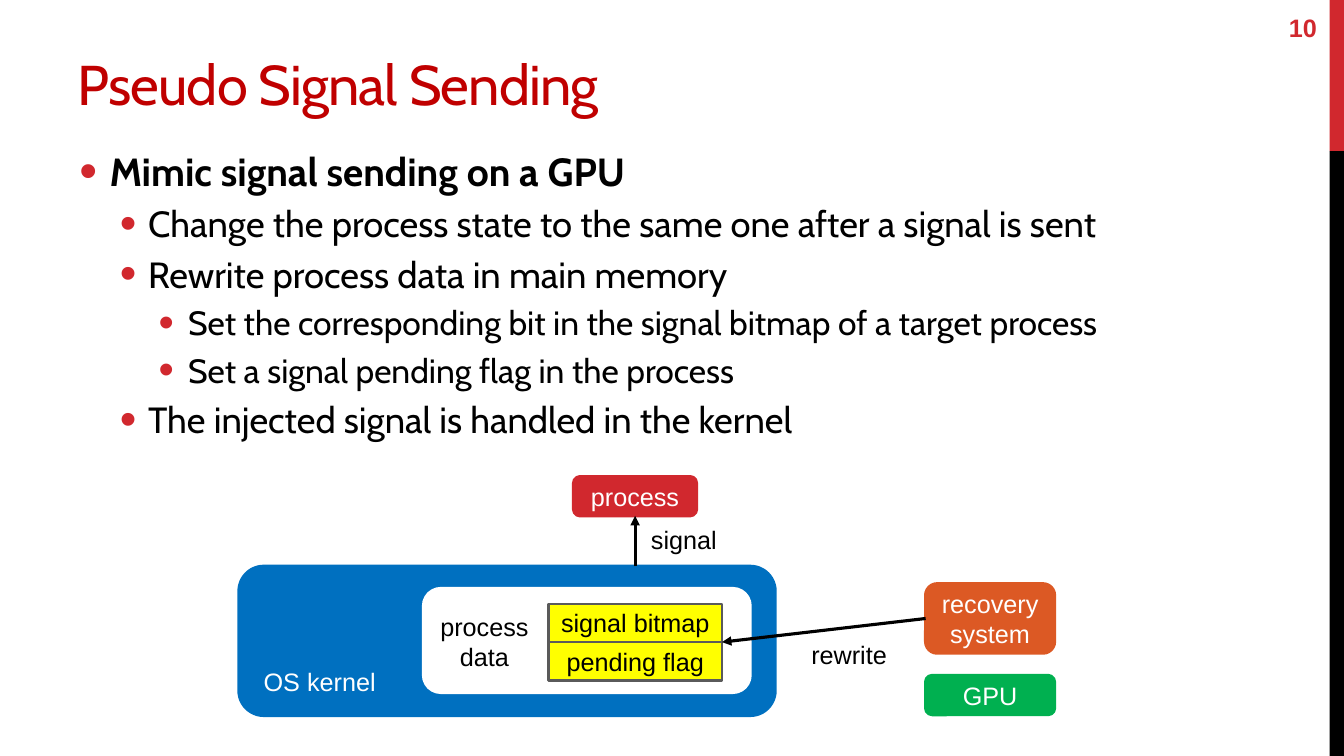
from lxml import etree
from pptx import Presentation
from pptx.dml.color import RGBColor
from pptx.enum.shapes import MSO_CONNECTOR, MSO_SHAPE
from pptx.enum.text import MSO_ANCHOR, MSO_AUTO_SIZE, PP_ALIGN
from pptx.oxml.ns import qn
from pptx.util import Cm, Pt

RECT, ROUND = MSO_SHAPE.RECTANGLE, MSO_SHAPE.ROUNDED_RECTANGLE
STRAIGHT = MSO_CONNECTOR.STRAIGHT
LEFT, CENTER, RIGHT = PP_ALIGN.LEFT, PP_ALIGN.CENTER, PP_ALIGN.RIGHT
MIDDLE, BOTTOM = MSO_ANCHOR.MIDDLE, MSO_ANCHOR.BOTTOM
NO_FIT = MSO_AUTO_SIZE.NONE
LEFT_SIDE, BOTTOM_SIDE = 1, 2

BLACK = RGBColor(0x00, 0x00, 0x00)
WHITE = RGBColor(0xFF, 0xFF, 0xFF)
RED = RGBColor(0xD1, 0x28, 0x2E)
DARK_RED = RGBColor(0xC0, 0x00, 0x00)
BLUE = RGBColor(0x00, 0x70, 0xC0)
GREEN = RGBColor(0x00, 0xB0, 0x50)
ORANGE = RGBColor(0xDC, 0x59, 0x24)
YELLOW = RGBColor(0xFF, 0xFF, 0x00)
GRAY = RGBColor(0x5A, 0x5A, 0x5A)

# Level: (left indent in cm, hanging indent in cm, text size, space before)
LEVELS = [(0.76, 0.76, 28, 6), (1.73, 0.71, 26, 5), (2.74, 0.74, 24, 5)]
BULLETS = [
    (0, "Mimic signal sending on a GPU"),
    (1, "Change the process state to the same one after a signal is sent"),
    (1, "Rewrite process data in main memory"),
    (2, "Set the corresponding bit in the signal bitmap of a target process"),
    (2, "Set a signal pending flag in the process"),
    (1, "The injected signal is handled in the kernel"),
]


def apply(target, values):
    for name, value in values.items():
        setattr(target, name, value)


def add_xml(parent, tag, **attributes):
    return etree.SubElement(parent, qn(tag), attributes)


class SlideBuilder:
    heading_font = "Cabin"
    label_font = "Arial"
    label_size = 18

    def __init__(self, deck):
        self.page = deck.slides.add_slide(deck.slide_layouts[5])

    def add_span(self, para, text, font, size, color, bold=False):
        span = para.add_run()
        span.text = text
        apply(span.font, {"name": font, "size": Pt(size), "bold": bold})
        span.font.color.rgb = color
        return span

    def fill_label(self, box, text, color, align, bold=False):
        frame = box.text_frame
        for index, line in enumerate(text.split("\n")):
            para = frame.add_paragraph() if index else frame.paragraphs[0]
            para.alignment = align
            self.add_span(para, line, self.label_font, self.label_size, color, bold)

    def title(self, text, left, top, width, height):
        box = self.page.shapes.title
        apply(box, {"left": Cm(left), "top": Cm(top),
                    "width": Cm(width), "height": Cm(height)})
        apply(box.text_frame, {"vertical_anchor": BOTTOM, "auto_size": NO_FIT,
                               "word_wrap": True})
        para = box.text_frame.paragraphs[0]
        para.alignment = LEFT
        span = self.add_span(para, text, self.heading_font, 40, DARK_RED)
        span.font._element.set("spc", "-60")

    def bullets(self, items, left, top, width, height):
        frame = self.page.shapes.add_textbox(
            Cm(left), Cm(top), Cm(width), Cm(height)).text_frame
        apply(frame, {"word_wrap": True, "margin_left": Cm(0.3),
                      "margin_right": Cm(0.3)})
        for index, (level, text) in enumerate(items):
            indent, hanging, size, before = LEVELS[level]
            para = frame.add_paragraph() if index else frame.paragraphs[0]
            apply(para, {"level": level, "space_before": Pt(before)})
            self.add_span(para, text, self.heading_font, size, BLACK, level == 0)
            properties = para._p.get_or_add_pPr()
            properties.set("marL", str(Cm(indent)))
            properties.set("indent", str(-Cm(hanging)))
            add_xml(add_xml(properties, "a:buClr"), "a:srgbClr", val=str(RED))
            add_xml(properties, "a:buSzPct", val="130000")
            add_xml(properties, "a:buFont", typeface="Arial")
            add_xml(properties, "a:buChar", char="•")

    def block(self, kind, left, top, width, height, fill,
              text="", color=WHITE, line=None, line_width=2.25):
        box = self.page.shapes.add_shape(
            kind, Cm(left), Cm(top), Cm(width), Cm(height))
        box.shadow.inherit = False
        box.fill.solid()
        box.fill.fore_color.rgb = fill
        box.line.color.rgb = line or fill
        box.line.width = Pt(line_width)
        if text:
            box.text_frame.vertical_anchor = MIDDLE
            self.fill_label(box, text, color, CENTER)
        return box

    def bar(self, top, height, fill):
        self.block(RECT, 33.5, top, 0.36, height, fill).line.fill.background()

    def label(self, text, left, top, width, height=1.02, color=BLACK,
              align=LEFT, bold=False):
        box = self.page.shapes.add_textbox(
            Cm(left), Cm(top), Cm(width), Cm(height))
        box.text_frame.word_wrap = False
        self.fill_label(box, text, color, align, bold)

    def arrow(self, start, end, start_box=None, end_box=None):
        """Draw an arrow; each box is a (shape, side) pair to join."""
        line = self.page.shapes.add_connector(
            STRAIGHT, *(Cm(value) for value in start + end))
        if start_box:
            line.begin_connect(*start_box)
        if end_box:
            line.end_connect(*end_box)
        line.line.color.rgb = BLACK
        line.line.width = Pt(2.25)
        add_xml(line.line._get_or_add_ln(), "a:tailEnd", type="triangle")
        add_xml(line._element.spPr, "a:effectLst")


def main():
    deck = Presentation()
    deck.slide_width, deck.slide_height = Cm(33.86), Cm(19.05)
    slide = SlideBuilder(deck)

    slide.bar(0, 3.81, RED)
    slide.bar(3.81, 15.24, BLACK)
    slide.title("Pseudo Signal Sending", 1.7, 0.43, 30.53, 2.64)
    slide.bullets(BULLETS, 1.7, 3.58, 30.53, 14.45)
    slide.label("10", 30.89, 0.18, 2.54, color=RED, align=RIGHT, bold=True)

    slide.block(ROUND, 6.02, 14.27, 13.51, 3.76, BLUE)
    slide.block(ROUND, 10.67, 14.83, 8.23, 2.62, WHITE)
    for row, text in enumerate(["signal bitmap", "pending flag"]):
        slide.block(RECT, 13.82, 15.21 + row * 0.97, 4.37, 0.97, YELLOW,
                    text, BLACK, GRAY, 1.5)
    process = slide.block(ROUND, 14.45, 12.01, 3.1, 0.99, RED, "process")
    slide.block(ROUND, 23.32, 17.02, 3.25, 0.99, GREEN, "GPU")
    recovery = slide.block(ROUND, 23.32, 14.71, 3.25, 1.75, ORANGE,
                           "recovery system")

    slide.arrow((23.32, 15.58), (18.19, 16.18), start_box=(recovery, LEFT_SIDE))
    slide.arrow((16, 14.27), (16, 13), end_box=(process, BOTTOM_SIDE))
    slide.label("rewrite", 20.19, 15.98, 2.44)
    slide.label("OS kernel", 6.38, 16.66, 3.35, color=WHITE, align=CENTER)
    slide.label("signal", 16.15, 13.08, 2.18)
    slide.label("process\ndata", 10.82, 15.27, 2.77, 1.8, align=CENTER)

    deck.save("out.pptx")


if __name__ == "__main__":
    main()
